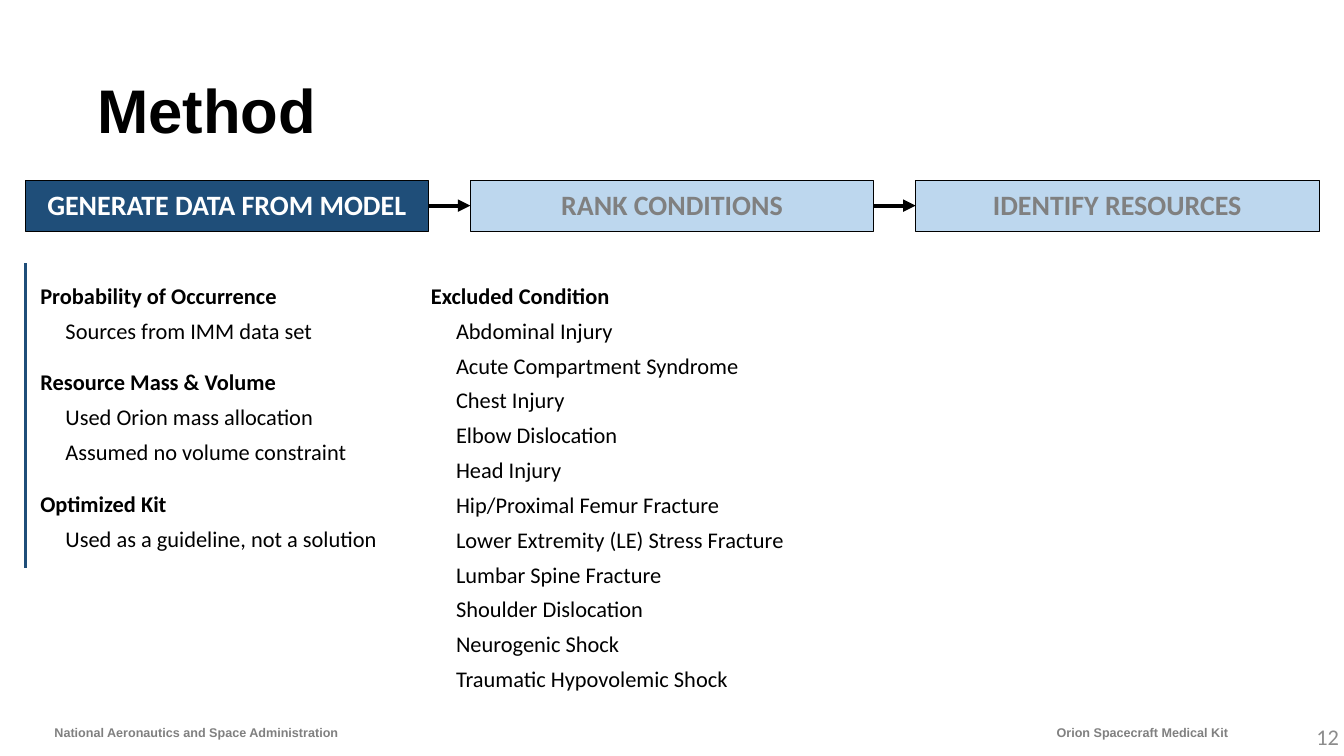
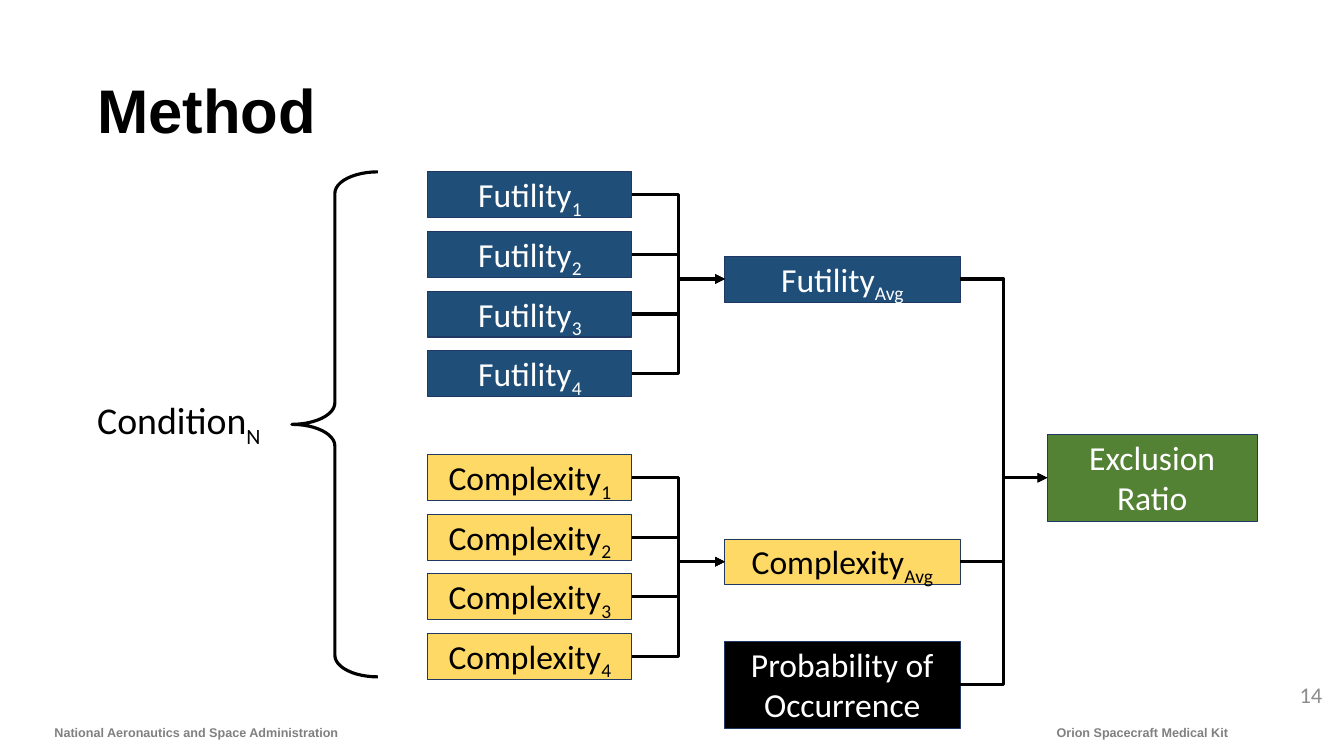
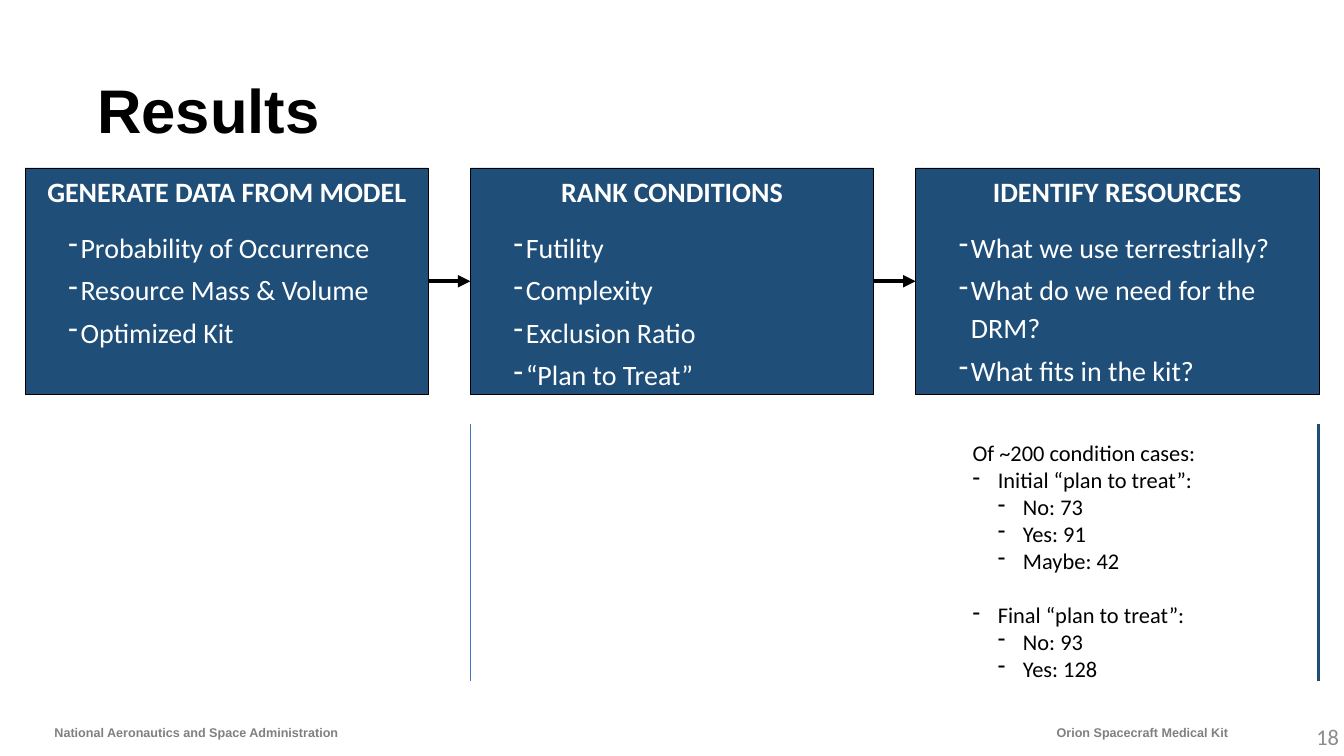
from dataclasses import dataclass
from typing import Any

from lxml.etree import SubElement
from pptx import Presentation
from pptx.dml.color import RGBColor as Rgb
from pptx.enum.shapes import MSO_CONNECTOR as Link, MSO_SHAPE as Form
from pptx.enum.text import MSO_ANCHOR as Anchor, MSO_AUTO_SIZE as Fit, PP_ALIGN as Align
from pptx.oxml.ns import qn
from pptx.util import Inches, Pt


@dataclass(frozen=True)
class Theme:
    black: str = "000000"
    white: str = "FFFFFF"
    grey: str = "808080"
    pale: str = "8C8C8C"
    navy: str = "1F4E79"
    sky: str = "BDD7EE"
    gold: str = "FFD966"
    green: str = "548235"
    edge: str = "203864"
    thin: str = "4472C4"
    head: str = "Arial"
    body: str = "Calibri"
    title: int = 88
    large: int = 54
    node: int = 48
    step: int = 40
    text: int = 32
    foot: int = 18
    loose: float = 1.14


@dataclass(frozen=True)
class Rect:
    left: float
    top: float
    width: float
    height: float

    def sizes(self) -> tuple:
        return tuple(map(Inches, (self.left, self.top, self.width, self.height)))


@dataclass(frozen=True)
class Step:
    head: str
    items: tuple = ()
    live: bool = True


@dataclass(frozen=True)
class Topic:
    head: str
    items: tuple


@dataclass(frozen=True)
class Group:
    name: str
    top: float
    fill: str
    ink: str


T = Theme()

MODEL, RANK, FIND = "GENERATE DATA FROM MODEL", "RANK CONDITIONS", "IDENTIFY RESOURCES"

PLAN = (Step(MODEL), Step(RANK, live=False), Step(FIND, live=False))
DONE = (
    Step(MODEL, ("Probability of Occurrence", "Resource Mass & Volume", "Optimized Kit")),
    Step(RANK, ("Futility", "Complexity", "Exclusion Ratio", "“Plan to Treat”")),
    Step(FIND, ("What we use terrestrially?", "What do we need for the DRM?",
                "What fits in the kit?")),
)
DATA = (
    Topic("Probability of Occurrence", ("Sources from IMM data set",)),
    Topic("Resource Mass & Volume",
          ("Used Orion mass allocation", "Assumed no volume constraint")),
    Topic("Optimized Kit", ("Used as a guideline, not a solution",)),
)
LEFT_OUT = (
    Topic("Excluded Condition", (
        "Abdominal Injury", "Acute Compartment Syndrome", "Chest Injury",
        "Elbow Dislocation", "Head Injury", "Hip/Proximal Femur Fracture",
        "Lower Extremity (LE) Stress Fracture", "Lumbar Spine Fracture",
        "Shoulder Dislocation", "Neurogenic Shock", "Traumatic Hypovolemic Shock")),
)
CASES = (
    Topic("Initial “plan to treat”:", ("No: 73", "Yes: 91", "Maybe: 42")),
    Topic("Final “plan to treat”:", ("No: 93", "Yes: 128")),
)
GROUPS = (Group("Futility", 3.41, T.navy, T.white),
          Group("Complexity", 9.02, T.gold, T.black))


def say(frame: Any, text: str, *, size: int = T.text, color: str = T.black,
        font: str = T.body, bold: bool = False, align: Any = Align.LEFT,
        sub: str = "", line: float = 1.0, before: float = 0, after: float = 0,
        left: float = 0, hang: float = 0, level: int = 0) -> None:
    first = not frame.text
    para = frame.paragraphs[0] if first else frame.add_paragraph()
    para.level = level
    props = para._p.get_or_add_pPr()
    props.set("marL", str(Inches(left)))
    props.set("indent", str(-Inches(hang)))
    SubElement(props, qn("a:buChar"), char="-") if hang else SubElement(props, qn("a:buNone"))
    para.alignment = align
    para.line_spacing = line
    para.space_before = Pt(0 if first else before)
    para.space_after = Pt(after)
    for part in filter(None, (text, sub)):
        run = para.add_run()
        run.text = part
        run.font.size, run.font.name, run.font.bold = Pt(size), font, bold
        run.font.color.rgb = Rgb.from_string(color)
    if sub:
        run.font._element.set("baseline", "-25000")


def setup(frame: Any, anchor: Any = Anchor.TOP, pad: float | None = None,
          grow: bool = False) -> Any:
    frame.word_wrap = True
    frame.vertical_anchor = anchor
    frame.auto_size = Fit.SHAPE_TO_FIT_TEXT if grow else Fit.NONE
    if pad is not None:
        frame.margin_left = frame.margin_right = Inches(pad)
        frame.margin_top = frame.margin_bottom = Inches(pad)
    return frame


def add_text(slide: Any, rect: Rect, **opts: Any) -> Any:
    return setup(slide.shapes.add_textbox(*rect.sizes()).text_frame, **opts)


def add_box(slide: Any, rect: Rect, fill: str | None, edge: str = T.black,
            width: float = 0.75, form: Any = Form.RECTANGLE, grow: bool = False) -> Any:
    box = slide.shapes.add_shape(form, *rect.sizes())
    box.shadow.inherit = False
    if fill:
        box.fill.solid()
        box.fill.fore_color.rgb = Rgb.from_string(fill)
    else:
        box.fill.background()
    box.line.color.rgb = Rgb.from_string(edge)
    box.line.width = Pt(width)
    setup(box.text_frame, grow=grow)
    return box


def style(link: Any, color: str, width: float, arrow: bool = False) -> None:
    link.line.color.rgb = Rgb.from_string(color)
    link.line.width = Pt(width)
    props = link._element.spPr
    if arrow:
        SubElement(props.find(qn("a:ln")), qn("a:tailEnd"), type="triangle")
    SubElement(props, qn("a:effectLst"))


def join(slide: Any, start: Any, end: Any, kind: Any, width: float) -> None:
    link = slide.shapes.add_connector(kind, 0, 0, 0, 0)
    link.begin_connect(start, 3)
    link.end_connect(end, 1)
    style(link, T.black, width, arrow=True)


def rule(slide: Any, left: float, top: float, end: float, color: str, width: float) -> None:
    link = slide.shapes.add_connector(
        Link.STRAIGHT, Inches(left), Inches(top), Inches(left), Inches(end))
    style(link, color, width)


def add_page(deck: Any, title: str, number: int, left: float = 21.11,
             top: float = 14.35) -> Any:
    slide = deck.slides.add_slide(deck.slide_layouts[5])
    head = slide.shapes.title
    head.left, head.top, head.width, head.height = Rect(1.83, 0.8, 23, 2.9).sizes()
    say(setup(head.text_frame, Anchor.MIDDLE), title, size=T.title, font=T.head,
        bold=True, line=0.9)
    feet = (
        ("Orion Spacecraft Medical Kit", Rect(17.95, 14.33, 6.48, 0.42), Align.RIGHT),
        ("National Aeronautics and Space Administration",
         Rect(1.02, 14.33, 10.41, 0.42), Align.LEFT),
    )
    for text, rect, align in feet:
        say(add_text(slide, rect, anchor=Anchor.BOTTOM, pad=0.06, grow=True), text,
            size=T.foot, font=T.head, color=T.grey, bold=True, align=align)
    say(add_text(slide, Rect(left, top, 5.56, 0.53), anchor=Anchor.MIDDLE),
        str(number), color=T.pale, align=Align.RIGHT)
    return slide


def add_steps(slide: Any, steps: tuple, top: float, height: float) -> None:
    boxes = []
    for i, step in enumerate(steps):
        rect = Rect(0.5 + i * (26.17 - 8.5) / 2, top, 8, height)
        box = add_box(slide, rect, T.navy if step.live else T.sky)
        ink = T.white if step.live else T.grey
        say(box.text_frame, step.head, size=T.step, color=ink, bold=True,
            align=Align.CENTER, line=T.loose, after=24)
        for item in step.items:
            say(box.text_frame, item, size=T.step, color=ink, line=T.loose, after=6,
                left=1, hang=0.24)
        boxes.append(box)
    for start, end in zip(boxes, boxes[1:]):
        join(slide, start, end, Link.STRAIGHT, 6)


def add_topics(slide: Any, rect: Rect, topics: tuple) -> None:
    frame = add_text(slide, rect, pad=0.3, grow=True)
    for topic in topics:
        say(frame, topic.head, bold=True, line=T.loose, before=24, after=6)
        for item in topic.items:
            say(frame, item, line=T.loose, after=6, left=0.5, level=1)


def add_node(slide: Any, rect: Rect, text: str, fill: str, ink: str, sub: str = "",
             width: float = 0.75) -> Any:
    box = add_box(slide, rect, fill, T.edge, width, grow=True)
    say(box.text_frame, text, sub=sub, size=T.node, color=ink, align=Align.CENTER)
    return box


def add_data(deck: Any) -> None:
    slide = add_page(deck, "Method", 12)
    add_steps(slide, PLAN, 3.58, 1)
    add_topics(slide, Rect(0.5, 5.22, 11, 6.05), DATA)
    rule(slide, 0.5, 5.22, 11.27, T.navy, 4.5)
    add_topics(slide, Rect(8.25, 5.22, 12.33, 8.86), LEFT_OUT)


def add_ratio(deck: Any) -> None:
    slide = add_page(deck, "Method", 14, 20.78, 13.52)
    say(add_text(slide, Rect(1.83, 7.83, 3.83, 1.01), grow=True), "Condition",
        sub="N", size=T.large)
    brace = add_box(slide, Rect(5.79, 3.41, 1.71, 10.02), None, width=4.5,
                    form=Form.LEFT_BRACE)
    brace.adjustments[0], brace.adjustments[1] = 0.25, 0.5
    feeds = []
    for group in GROUPS:
        mean = add_node(slide, Rect(14.38, group.top + 1.67, 4.67, 0.91), group.name,
                        group.fill, group.ink, "Avg")
        for i in range(4):
            node = add_node(slide, Rect(8.49, group.top + i * 3.55 / 3, 4.05, 0.91),
                            group.name, group.fill, group.ink, str(i + 1), 1.5)
            join(slide, node, mean, Link.ELBOW, 4.5)
        feeds.append(mean)
    feeds.append(add_node(slide, Rect(14.38, 12.73, 4.67, 1.72),
                          "Probability of Occurrence", T.black, T.white))
    ratio = add_node(slide, Rect(20.78, 8.62, 4.17, 1.72), "Exclusion Ratio",
                     T.green, T.white)
    for feed in feeds:
        join(slide, feed, ratio, Link.ELBOW, 4.5)


def add_results(deck: Any) -> None:
    slide = add_page(deck, "Results", 18)
    add_steps(slide, DONE, 3.33, 4.5)
    frame = add_text(slide, Rect(19, 8.42, 5.42, 5.99), pad=0.3, grow=True)
    say(frame, "Of ~200 condition cases:")
    for i, case in enumerate(CASES):
        say(frame, case.head, left=0.5, hang=0.5, before=39 * i)
        for item in case.items:
            say(frame, item, left=1, hang=0.5, level=1)
    rule(slide, 9.33, 8.42, 13.51, T.thin, 0.5)
    rule(slide, 26.17, 8.42, 13.51, T.navy, 4.5)


def main() -> None:
    deck = Presentation()
    deck.slide_width, deck.slide_height = Inches(26.67), Inches(15)
    add_data(deck)
    add_ratio(deck)
    add_results(deck)
    deck.save("out.pptx")


if __name__ == "__main__":
    main()
